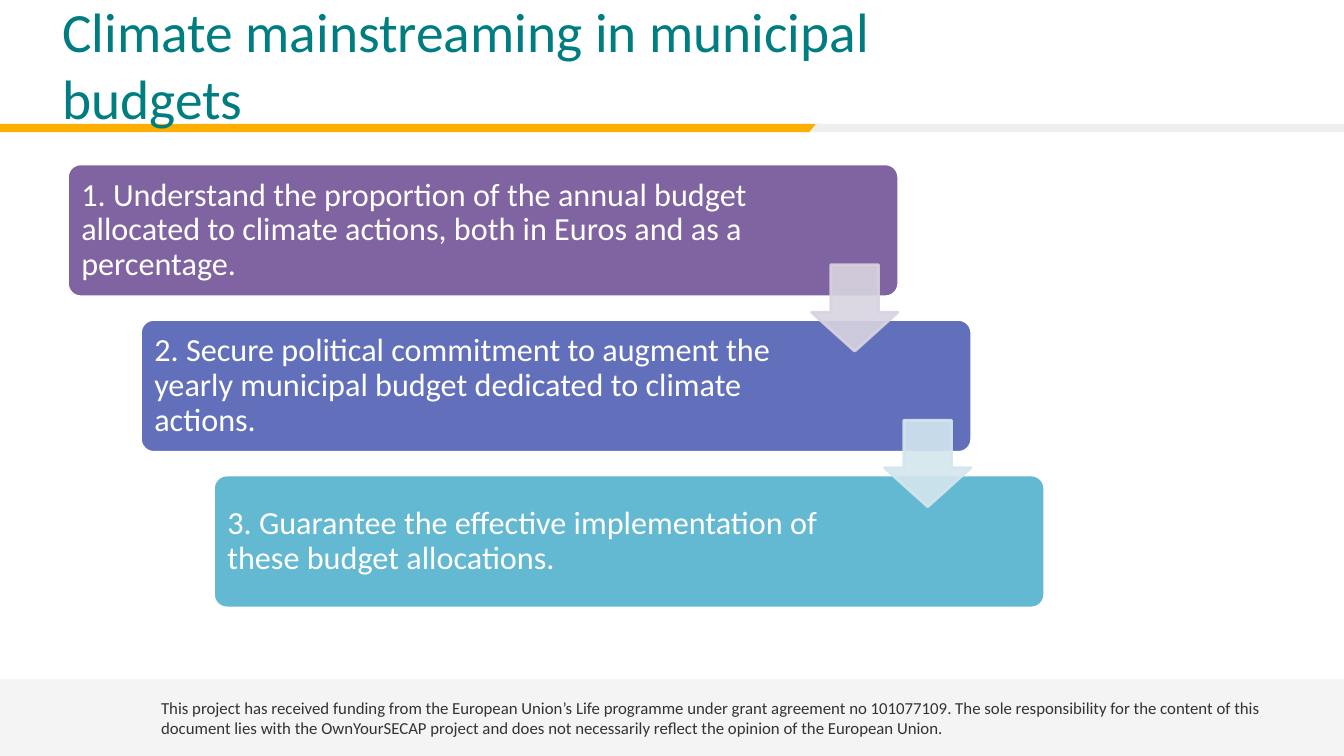
from dataclasses import dataclass

from lxml.etree import SubElement
from pptx import Presentation
from pptx.dml.color import RGBColor
from pptx.enum.shapes import MSO_SHAPE as Kind
from pptx.enum.text import MSO_ANCHOR as Anchor, PP_ALIGN as Align
from pptx.oxml.ns import qn
from pptx.shapes.autoshape import Shape
from pptx.slide import Slide
from pptx.text.text import TextFrame
from pptx.util import Cm, Pt

WHITE = RGBColor(0xFF, 0xFF, 0xFF)
PALE = RGBColor(0xF4, 0xF4, 0xF4)
GREY = RGBColor(0xEF, 0xEF, 0xEF)
DARK = RGBColor(0x33, 0x33, 0x33)
AMBER = RGBColor(0xFD, 0xAE, 0x02)
TEAL = RGBColor(0x00, 0x7D, 0x80)
PURPLE = RGBColor(0x80, 0x64, 0xA2)
INDIGO = RGBColor(0x62, 0x70, 0xBC)
AQUA = RGBColor(0x63, 0xB8, 0xD2)
LILAC = RGBColor(0xD8, 0xD3, 0xE0)
MIST = RGBColor(0xD3, 0xE6, 0xEE)

WIDTH, HEIGHT = 33.87, 19.05
FONT = "Calibri"

# Staircase of steps, in centimetres
LEFT, TOP = 1.7, 4.13
SHIFT, DROP = 1.84, 3.92
STEP_W, STEP_H = 20.95, 3.35
PAD = 0.1
ARROW = 2.18
ARROW_X, ARROW_Y = 18.75, 2.54


@dataclass
class Step:
    text: str
    fill: RGBColor
    wide: float
    arrow: RGBColor | None = None


@dataclass
class Band:
    points: list[tuple[float, float]]
    fill: RGBColor


STEPS = [
    Step("1. Understand the proportion of the annual budget allocated to climate "
         "actions, both in Euros and as a percentage.", PURPLE, 17.32, LILAC),
    Step("2. Secure political commitment to augment the yearly municipal budget "
         "dedicated to climate actions.", INDIGO, 16.71, MIST),
    Step("3. Guarantee the effective implementation of these budget allocations.",
         AQUA, 16.71),
]

BAND_TOP, BAND_END = 3.12, 3.33
BANDS = [
    Band([(0, BAND_TOP), (20.68, BAND_TOP), (20.4, BAND_END), (0, BAND_END)], AMBER),
    Band([(WIDTH, BAND_END), (20.4, BAND_END), (20.57, BAND_TOP), (WIDTH, BAND_TOP)], GREY),
]


def write(frame: TextFrame, text: str, *, size: float, color: RGBColor,
          space: float | None = None) -> None:
    """Fill a frame with one left-aligned, vertically centred paragraph."""
    frame.word_wrap = True
    frame.vertical_anchor = Anchor.MIDDLE
    para = frame.paragraphs[0]
    para.alignment = Align.LEFT
    para.line_spacing = space
    run = para.add_run()
    run.text = text
    run.font.name, run.font.size = FONT, Pt(size)
    run.font.color.rgb = color


def paint(shape: Shape, fill: RGBColor, line: RGBColor | None = None) -> None:
    shape.shadow.inherit = False
    shape.fill.solid()
    shape.fill.fore_color.rgb = fill
    if line is None:
        shape.line.fill.background()
    else:
        shape.line.color.rgb = line
        shape.line.width = Pt(2)


def fade(shape: Shape, share: int) -> None:
    """Set the opacity of fill and line, in percent."""
    for color in shape.element.spPr.iter(qn("a:srgbClr")):
        SubElement(color, qn("a:alpha"), val=str(share * 1000))


def box(slide: Slide, x: float, y: float, w: float, h: float) -> TextFrame:
    return slide.shapes.add_textbox(Cm(x), Cm(y), Cm(w), Cm(h)).text_frame


def draw_frame(slide: Slide) -> None:
    # Footer
    foot = slide.shapes.add_shape(Kind.RECTANGLE, 0, Cm(17.12), Cm(WIDTH), Cm(1.93))
    paint(foot, PALE)
    foot.text_frame.margin_left = Cm(4.06)
    write(foot.text_frame,
          "This project has received funding from the European Union’s Life programme "
          "under grant agreement no 101077109. The sole responsibility for the content "
          "of this document lies with the OwnYourSECAP project and does not necessarily "
          "reflect the opinion of the European Union.", size=12, color=DARK)

    # Two-tone rule below the title
    for band in BANDS:
        spots = [(Cm(x), Cm(y)) for x, y in band.points]
        path = slide.shapes.build_freeform(*spots[0], scale=1.0)
        path.add_line_segments(spots[1:], close=True)
        paint(path.convert_to_shape(), band.fill)


def draw_steps(slide: Slide) -> None:
    spots = [(LEFT + i * SHIFT, TOP + i * DROP) for i in range(len(STEPS))]

    # Boxes
    for step, (x, y) in zip(STEPS, spots):
        card = slide.shapes.add_shape(Kind.ROUNDED_RECTANGLE, Cm(x), Cm(y),
                                      Cm(STEP_W), Cm(STEP_H))
        card.adjustments[0] = 0.1
        paint(card, step.fill, WHITE)
        label = box(slide, x + PAD, y + PAD, step.wide, STEP_H - 2 * PAD)
        label.margin_top = label.margin_bottom = Cm(0.25)
        write(label, step.text, size=23, color=WHITE, space=0.9)

    # Arrows to the next step
    for step, (x, y) in zip(STEPS, spots):
        if step.arrow:
            arrow = slide.shapes.add_shape(Kind.DOWN_ARROW, Cm(x + ARROW_X),
                                           Cm(y + ARROW_Y), Cm(ARROW), Cm(ARROW))
            arrow.adjustments[0], arrow.adjustments[1] = 0.55, 0.45
            paint(arrow, step.arrow, step.arrow)
            fade(arrow, 90)


def main() -> None:
    deck = Presentation()
    deck.slide_width, deck.slide_height = Cm(WIDTH), Cm(HEIGHT)
    slide = deck.slides.add_slide(deck.slide_layouts[6])
    draw_frame(slide)
    draw_steps(slide)
    # Title
    write(box(slide, 1.32, 0.53, 21.64, 2.16),
          "Climate mainstreaming in municipal budgets", size=39.6, color=TEAL)
    deck.save("out.pptx")


if __name__ == "__main__":
    main()
